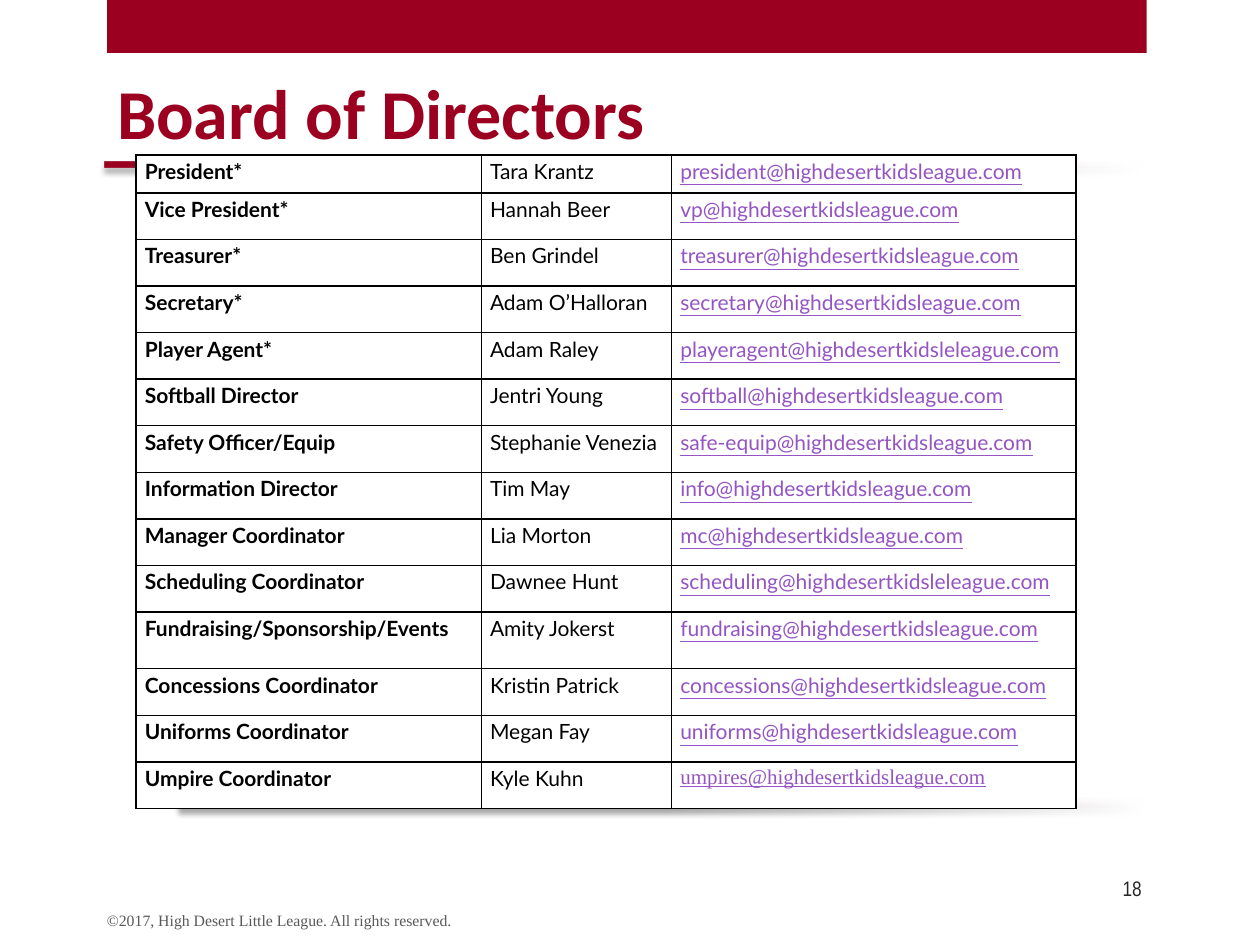
from pptx import Presentation
from pptx.dml.color import RGBColor
from pptx.enum.shapes import MSO_SHAPE
from pptx.enum.text import MSO_ANCHOR, MSO_AUTO_SIZE, PP_ALIGN
from pptx.oxml import parse_xml
from pptx.oxml.ns import nsdecls
from pptx.util import Inches, Pt

RECTANGLE = MSO_SHAPE.RECTANGLE
TOP, MIDDLE = MSO_ANCHOR.TOP, MSO_ANCHOR.MIDDLE
LEFT, RIGHT = PP_ALIGN.LEFT, PP_ALIGN.RIGHT
NO_AUTOFIT = MSO_AUTO_SIZE.NONE

CRIMSON = RGBColor(0x9B, 0x00, 0x20)
BLACK = RGBColor(0x00, 0x00, 0x00)
WHITE = RGBColor(0xFF, 0xFF, 0xFF)
PURPLE = RGBColor(0x94, 0x54, 0xC3)
CHARCOAL = RGBColor(0x26, 0x26, 0x26)
GREY = RGBColor(0x59, 0x59, 0x59)

DOMAIN = "@highdesertkidsleague.com"
DOMAIN_VARIANT = "@highdesertkidsleleague.com"
DIRECTORS = [
    ("President*", "Tara Krantz", "president" + DOMAIN),
    ("Vice President*", "Hannah Beer", "vp" + DOMAIN),
    ("Treasurer*", "Ben Grindel", "treasurer" + DOMAIN),
    ("Secretary*", "Adam O’Halloran", "secretary" + DOMAIN),
    ("Player Agent*", "Adam Raley", "playeragent" + DOMAIN_VARIANT),
    ("Softball Director", "Jentri Young", "softball" + DOMAIN),
    ("Safety Officer/Equip", "Stephanie Venezia", "safe-equip" + DOMAIN),
    ("Information Director", "Tim May", "info" + DOMAIN),
    ("Manager Coordinator", "Lia Morton", "mc" + DOMAIN),
    ("Scheduling Coordinator", "Dawnee Hunt", "scheduling" + DOMAIN_VARIANT),
    ("Fundraising/Sponsorship/Events", "Amity Jokerst", "fundraising" + DOMAIN),
    ("Concessions Coordinator", "Kristin Patrick", "concessions" + DOMAIN),
    ("Uniforms Coordinator", "Megan Fay", "uniforms" + DOMAIN),
    ("Umpire Coordinator", "Kyle Kuhn", "umpires" + DOMAIN),
]
COLUMN_WIDTHS = [2.74, 1.51, 3.21]
ROW_HEIGHTS = [0.3] + [0.37] * 9 + [0.45] + [0.37] * 3


def add_run(paragraph, text, font_name, size, color, bold=False, underline=False):
    run = paragraph.add_run()
    run.text = text
    run.font.name = font_name
    run.font.size = Pt(size)
    run.font.color.rgb = color
    run.font.bold = bold
    run.font.underline = underline


prs = Presentation()
prs.slide_width = Inches(10)
prs.slide_height = Inches(7.5)
slide = prs.slides.add_slide(prs.slide_layouts[5])

# Top band and fading rules
band = slide.shapes.add_shape(RECTANGLE, Inches(0.85), 0, Inches(8.25), Inches(0.42))
band.shadow.inherit = False
band.fill.solid()
band.fill.fore_color.rgb = CRIMSON
band.line.fill.background()

for left, top, width, height in [(0.83, 1.28, 8.25, 0.05), (1.42, 6.33, 7.67, 0.08)]:
    rule = slide.shapes.add_shape(
        RECTANGLE, Inches(left), Inches(top), Inches(width), Inches(height))
    rule.line.fill.background()
    properties = rule.element.spPr
    properties.insert(2, parse_xml(
        f'<a:gradFill {nsdecls("a")}><a:gsLst>'
        f'<a:gs pos="0"><a:srgbClr val="{CRIMSON}"/></a:gs>'
        f'<a:gs pos="50000"><a:srgbClr val="{CRIMSON}"/></a:gs>'
        f'<a:gs pos="100000"><a:srgbClr val="{WHITE}"><a:alpha val="0"/></a:srgbClr></a:gs>'
        '</a:gsLst><a:lin ang="0"/></a:gradFill>'))
    properties.append(parse_xml(
        f'<a:effectLst {nsdecls("a")}>'
        f'<a:outerShdw blurRad="{Pt(3)}" dist="{Pt(3)}" dir="5400000" rotWithShape="0">'
        f'<a:srgbClr val="{BLACK}"><a:alpha val="35000"/></a:srgbClr>'
        '</a:outerShdw></a:effectLst>'))

# Title
title = slide.shapes.title
title.left, title.top = Inches(0.83), Inches(0.5)
title.width, title.height = Inches(7.42), Inches(1.75)
title.text_frame.vertical_anchor = TOP
title.text_frame.auto_size = NO_AUTOFIT
title_line = title.text_frame.paragraphs[0]
title_line.alignment = LEFT
add_run(title_line, "Board of Directors", "Calibri", 40, CRIMSON, bold=True)

# Slide number and copyright
for text, left, top, width, align, font_name, size, color in [
    ("18", 8.33, 6.85, 0.83, RIGHT, "Arial Narrow", 12, CHARCOAL),
    ("©2017, High Desert Little League. All rights reserved.",
     0.75, 7.1, 4.92, LEFT, "Times New Roman", 9, GREY),
]:
    footer = slide.shapes.add_textbox(
        Inches(left), Inches(top), Inches(width), Inches(0.4)).text_frame
    footer.word_wrap = True
    footer.vertical_anchor = MIDDLE
    footer.paragraphs[0].alignment = align
    add_run(footer.paragraphs[0], text, font_name, size, color)

# Directors table
table = slide.shapes.add_table(
    len(DIRECTORS), len(COLUMN_WIDTHS), Inches(1.08), Inches(1.23),
    Inches(sum(COLUMN_WIDTHS)), Inches(sum(ROW_HEIGHTS))).table
table.first_row = False
table.horz_banding = False
for column, width in zip(table.columns, COLUMN_WIDTHS):
    column.width = Inches(width)
for row, height in zip(table.rows, ROW_HEIGHTS):
    row.height = Inches(height)

for row_index, director in enumerate(DIRECTORS):
    for column_index, text in enumerate(director):
        cell = table.cell(row_index, column_index)
        cell.margin_left = cell.margin_right = Inches(0.07)
        cell.margin_top = cell.margin_bottom = 0
        is_email = column_index == 2
        entry = cell.text_frame.paragraphs[0]
        entry.line_spacing = 1.15
        entry.space_after = Pt(8.2)
        add_run(entry, text,
                "Times New Roman" if text.startswith("umpires") else "Lato", 12,
                PURPLE if is_email else BLACK,
                bold=column_index == 0, underline=is_email)
        cell_properties = cell._tc.get_or_add_tcPr()
        for side in ("lnL", "lnR", "lnT", "lnB"):
            cell_properties.append(parse_xml(
                f'<a:{side} {nsdecls("a")} w="{Pt(1)}"><a:solidFill>'
                f'<a:srgbClr val="{BLACK}"/></a:solidFill></a:{side}>'))
        cell.fill.solid()
        cell.fill.fore_color.rgb = WHITE

prs.save("out.pptx")
